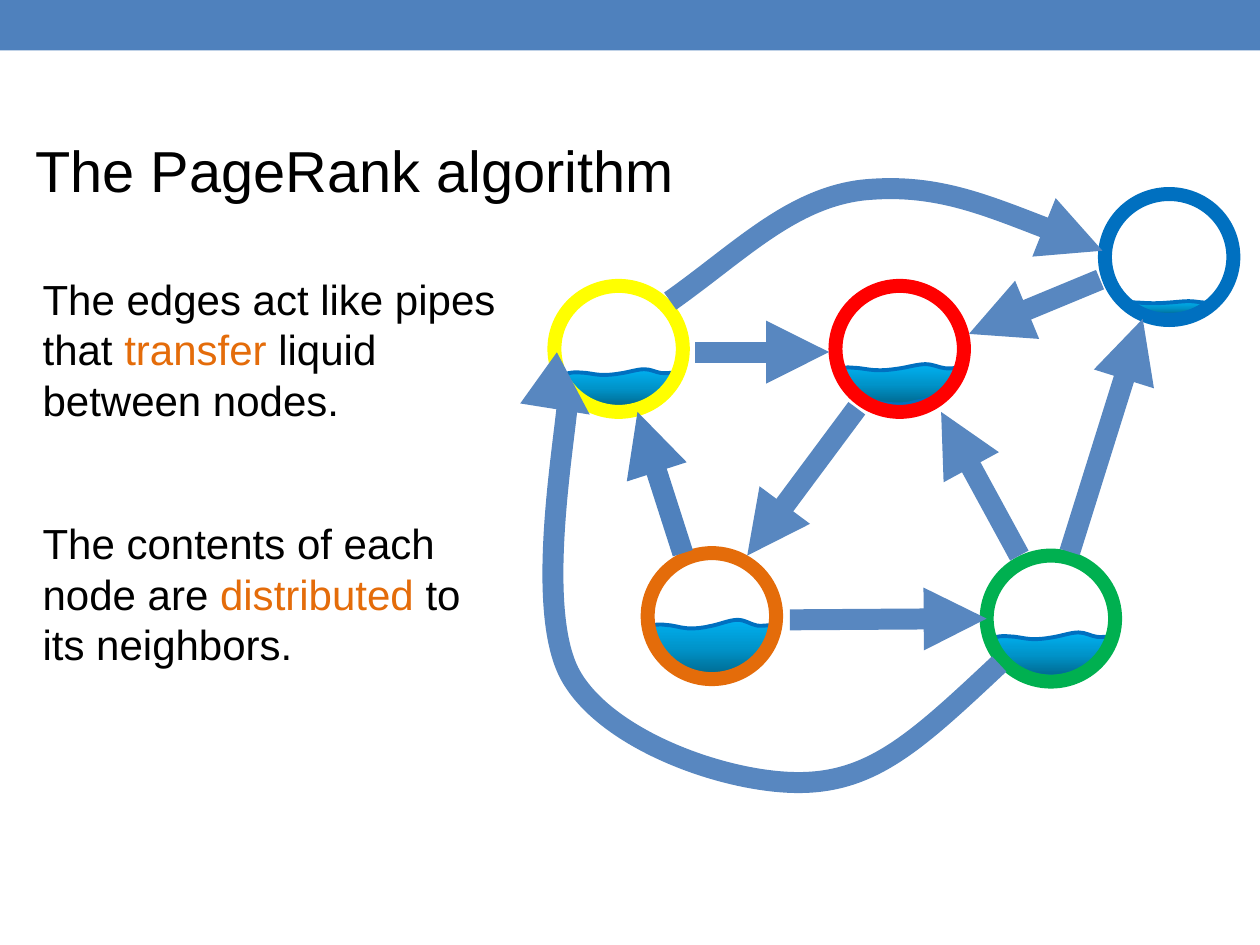
import copy
import pptx
import pptx.dml.color
import pptx.enum.shapes
import pptx.enum.text
import pptx.oxml.ns
import pptx.util
from lxml import etree

Pt = pptx.util.Pt
qn = pptx.oxml.ns.qn
MSO = pptx.enum.shapes.MSO_SHAPE
NONE, GROW = pptx.enum.text.MSO_AUTO_SIZE.NONE, pptx.enum.text.MSO_AUTO_SIZE.SHAPE_TO_FIT_TEXT

BLACK, ACCENT, BAR, PIPE = "000000", "E46C0A", "4F81BD", "5887C0"
WATER_LINE = "0070C0"
WATER_STOPS = [(0, "00688E"), (0.5, "0094CA"), (1, "00B0F0")]
RING_W, RING_H = 73.4, 72

TITLE = [("The PageRank algorithm", BLACK)]
NOTES = [
    (152.6, [("The edges act like pipes that ", BLACK), ("transfer", ACCENT),
             (" liquid between nodes.", BLACK)]),
    (292.3, [("The contents of each node are ", BLACK), ("distributed", ACCENT),
             (" to its neighbors.", BLACK)]),
]
NODES = [
    {"ring": (631.4, 110.9), "color": "0070C0", "water": (639.4, 172.1, 56.9, 7.9)},
    {"ring": (477.4, 163.4), "color": "FF0000", "water": (477.4, 208.1, 73.4, 23)},
    {"ring": (370.1, 316.1), "color": "E46C0A", "water": (370.1, 354.2, 73.4, 32.4)},
    {"ring": (316.8, 163.4), "color": "FFFF00", "water": (323.3, 211, 64.1, 21.6)},
    {"ring": (563.8, 317.5), "color": "00B050", "water": (567.4, 361.4, 69.8, 25.2)},
]
WATER = [
    (0, 13), (3, 9), (8, 7), (14, 9), (19, 9), (25, 14), (31, 15), (37, 16), (43, 14), (49, 11),
    (56, 8), (64, 0), (70, 0), (76, 0), (80, 8), (85, 10), (90, 12), (98, 7), (99, 11),
    (100, 15), (97, 30), (95, 37), (93, 44), (90, 49), (87, 56), (84, 63), (80, 74), (76, 80),
    (73, 86), (67, 91), (62, 94), (58, 98), (54, 100), (49, 100), (43, 100), (36, 98), (32, 94),
    (27, 91), (24, 85), (21, 80), (18, 76), (16, 73), (14, 66), (10, 58), (6, 45), (4, 37),
]
EDGES = [
    (628.6, 159.8, 553.7, 190.8, PIPE),
    (611.3, 315.4, 653, 182.2, PIPE),
    (582.5, 317.5, 537.8, 235.4, PIPE),
    (451.4, 354.2, 563.8, 353.5, PIPE),
    (397.4, 201.2, 473.8, 201.2, PIPE),
    (489.6, 233.3, 427, 317.5, PIPE),
    (390.2, 316.1, 364.3, 235.4, BAR),
]
BENDS = [
    [(383, 172.1), (421.9, 144.7), (451.4, 113.8), (492.5, 108.7),
     (533.5, 104.4), (582.5, 123.8), (630, 143.3)],
    [(571, 379.4), (525.6, 421.9), (500.4, 445.7), (460.1, 447.1),
     (419, 448.6), (349.2, 424.8), (326.9, 387.4), (304.6, 350.6), (323.3, 250.6),
     (324.7, 225.4), (326.9, 200.2), (334.1, 235.4), (337, 236.9)],
]


def rgb(value):
    return pptx.dml.color.RGBColor.from_string(value)


def stroke(s, color, width, arrow=False):
    s.line.color.rgb = rgb(color)
    s.line.width = Pt(width)
    if arrow:
        ln = s.line._get_or_add_ln()
        etree.SubElement(ln, qn("a:tailEnd"), type="triangle")


def curve(shapes, points):
    """Draw a chain of cubic curves: a start point, then three points per curve."""
    start, *rest = [(Pt(x), Pt(y)) for x, y in points]
    builder = shapes.build_freeform(*start)
    builder.add_line_segments(rest, close=False)
    s = builder.convert_to_shape()
    s.shadow.inherit = False
    path = s._element.spPr.find(".//" + qn("a:path"))
    segments = path.findall(qn("a:lnTo"))
    for i in range(0, len(segments), 3):
        bezier = etree.SubElement(path, qn("a:cubicBezTo"))
        for segment in segments[i:i + 3]:
            bezier.append(segment[0])
            path.remove(segment)
    return s


def add_water(shapes, left, top, width, height):
    s = curve(shapes, [(left + x * width / 100, top + y * height / 100) for x, y in WATER])
    s.fill.gradient()
    s.fill.gradient_angle = 90
    stops = s._element.spPr.find(".//" + qn("a:gsLst"))
    stops.append(copy.deepcopy(stops[-1]))
    for stop, (position, color) in zip(s.fill.gradient_stops, WATER_STOPS):
        stop.position = position
        stop.color.rgb = rgb(color)
    stroke(s, WATER_LINE, 2.25)


def add_ring(shapes, left, top, color):
    s = shapes.add_shape(MSO.OVAL, Pt(left), Pt(top), Pt(RING_W), Pt(RING_H))
    s.shadow.inherit = False
    s.fill.background()
    stroke(s, color, 8)


def add_edge(shapes, x1, y1, x2, y2, color):
    s = shapes.add_connector(pptx.enum.shapes.MSO_CONNECTOR.STRAIGHT,
                             Pt(x1), Pt(y1), Pt(x2), Pt(y2))
    etree.SubElement(s._element.spPr, qn("a:effectLst"))
    stroke(s, color, 12, arrow=True)


def write(s, box, runs, size, **frame):
    for name, value in zip(("left", "top", "width", "height"), box):
        setattr(s, name, Pt(value))
    tf = s.text_frame
    for name, value in frame.items():
        setattr(tf, name, value)
    p = tf.paragraphs[0]
    p.alignment = pptx.enum.text.PP_ALIGN.LEFT
    for text, color in runs:
        r = p.add_run()
        r.text = text
        for name, value in {"name": "Arial", "size": Pt(size)}.items():
            setattr(r.font, name, value)
        r.font.color.rgb = rgb(color)


def main():
    prs = pptx.Presentation()
    prs.slide_width, prs.slide_height = Pt(720), Pt(540)
    slide = prs.slides.add_slide(prs.slide_layouts[5])
    shapes = slide.shapes

    bar = shapes.add_shape(MSO.RECTANGLE, 0, 0, prs.slide_width, Pt(28.8))
    bar.shadow.inherit = False
    bar.fill.solid()
    bar.fill.fore_color.rgb = rgb(BAR)
    bar.line.fill.background()

    for node in NODES:
        add_water(shapes, *node["water"])
    for node in NODES:
        add_ring(shapes, *node["ring"], node["color"])
    for edge in EDGES:
        add_edge(shapes, *edge)
    for points in BENDS:
        s = curve(shapes, points)
        s.fill.background()
        stroke(s, PIPE, 12, arrow=True)

    top_anchor = pptx.enum.text.MSO_ANCHOR.TOP
    write(shapes.title, (13, 73.4, 383, 47.5), TITLE, 33,
          word_wrap=False, auto_size=NONE, vertical_anchor=top_anchor)
    for top, runs in NOTES:
        box = (17.3, top, 283, 94.3)
        write(shapes.add_textbox(0, 0, 0, 0), box, runs, 24, word_wrap=True, auto_size=GROW)
    prs.save("out.pptx")


if __name__ == "__main__":
    main()
